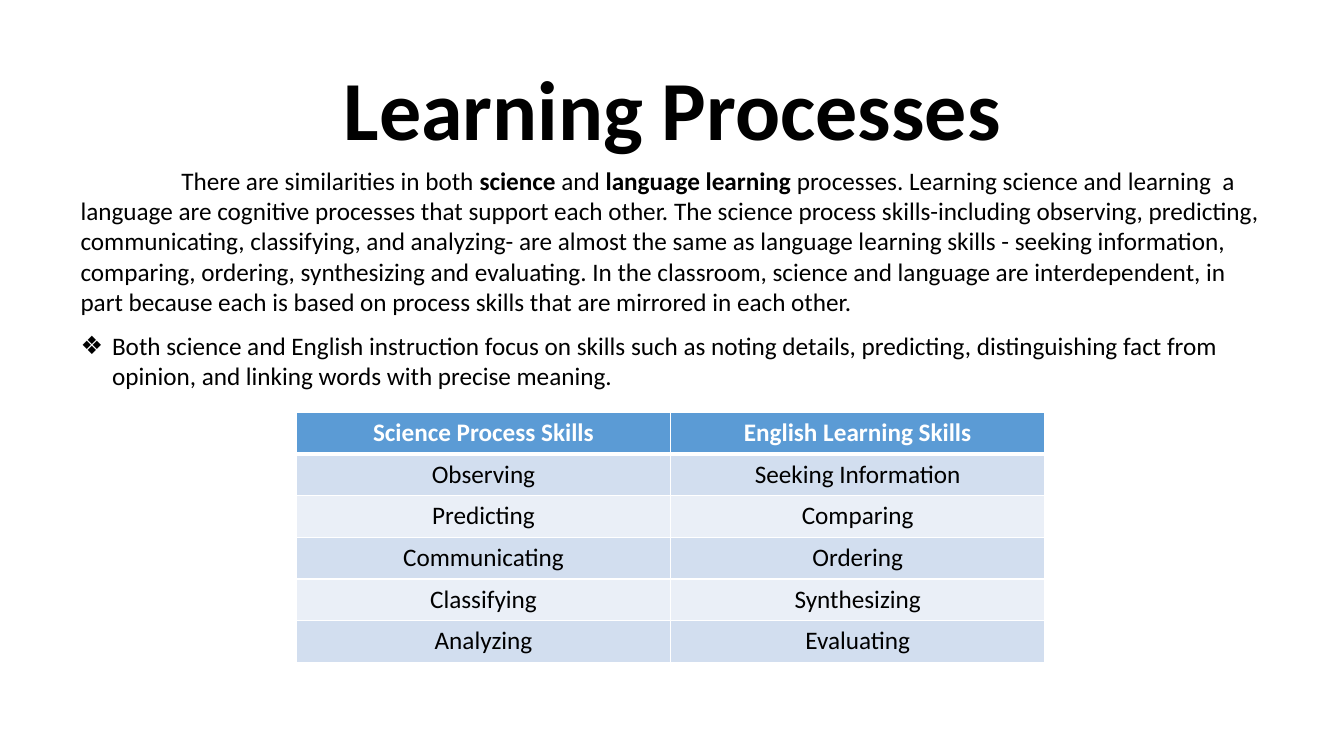
from lxml.etree import SubElement
from pptx import Presentation
from pptx.dml.color import RGBColor
from pptx.enum.text import MSO_ANCHOR as Anchor, MSO_AUTO_SIZE as AutoSize, PP_ALIGN as Align
from pptx.oxml.ns import qn
from pptx.util import Cm, Pt

COLORS = {"text": "000000", "white": "FFFFFF", "header": "5B9BD5",
          "band_dark": "D2DEEF", "band_light": "EAEFF7"}

TITLE = "Learning Processes"
INTRO = [
    ("There are similarities in both ", False),
    ("science ", True),
    ("and ", False),
    ("language learning ", True),
    ("processes. Learning science and learning  a language are cognitive processes that "
     "support each other. The science process skills-including observing, predicting, "
     "communicating, classifying, and analyzing- are almost the same as language learning "
     "skills - seeking information, comparing, ordering, synthesizing and evaluating. In the "
     "classroom, science and language are interdependent, in part because each is based on "
     "process skills that are mirrored in each other.", False),
]
FOCUS = [("Both science and English instruction focus on skills such as noting details, "
          "predicting, distinguishing fact from opinion, and linking words with precise "
          "meaning.", False)]
SKILLS = [
    ("Science Process Skills", "English Learning Skills"),
    ("Observing", "Seeking Information"),
    ("Predicting", "Comparing"),
    ("Communicating", "Ordering"),
    ("Classifying", "Synthesizing"),
    ("Analyzing", "Evaluating"),
]


class SlideBuilder:
    """Holds the style and the current slide."""

    font_name = "Calibri"
    body_size = 18

    def __init__(self, slide):
        self.slide = slide

    def place(self, shape, left, top, width, height):
        box = {"left": left, "top": top, "width": width, "height": height}
        for name, value in box.items():
            setattr(shape, name, Cm(value))

    def add_runs(self, paragraph, runs, size=body_size, color="text", **formats):
        for name, value in formats.items():
            setattr(paragraph, name, value)
        for text, bold in runs:
            run = paragraph.add_run()
            run.text = text
            style = {"name": self.font_name, "size": Pt(size), "bold": bold}
            for name, value in style.items():
                setattr(run.font, name, value)
            run.font.color.rgb = RGBColor.from_string(COLORS[color])

    def indent(self, paragraph, left, first_line, bullet=None):
        properties = paragraph._p.get_or_add_pPr()
        properties.set("marL", str(Cm(left)))
        properties.set("indent", str(Cm(first_line)))
        if bullet:
            SubElement(properties, qn("a:buChar"), char=bullet)

    def title(self, text, *box):
        shape = self.slide.shapes.title
        self.place(shape, *box)
        frame = shape.text_frame
        frame.vertical_anchor = Anchor.MIDDLE
        self.add_runs(frame.paragraphs[0], [(text, True)], size=60,
                      alignment=Align.CENTER, line_spacing=0.9)

    def bullet_list(self, items, *box):
        shape = self.slide.placeholders[1]
        self.place(shape, *box)
        frame = shape.text_frame
        frame.auto_size = AutoSize.NONE
        for index, runs in enumerate(items):
            paragraph = frame.add_paragraph() if index else frame.paragraphs[0]
            self.indent(paragraph, 0.79, -0.79, "❖")
            self.add_runs(paragraph, runs, space_before=Pt(0))

    def text(self, runs, *box):
        shape = self.slide.shapes.add_textbox(*map(Cm, box))
        frame = shape.text_frame
        frame.word_wrap = True
        frame.auto_size = AutoSize.SHAPE_TO_FIT_TEXT
        self.indent(frame.paragraphs[0], 0, 2.54)
        self.add_runs(frame.paragraphs[0], runs)

    def borders(self, cell, top, bottom):
        properties = cell._tc.get_or_add_tcPr()
        for side, points in {"L": 1, "R": 1, "T": top, "B": bottom}.items():
            line = SubElement(properties, qn(f"a:ln{side}"), w=str(Pt(points)))
            fill = SubElement(line, qn("a:solidFill"))
            SubElement(fill, qn("a:srgbClr"), val=COLORS["white"])

    def table(self, rows, left, top, column_width, row_height):
        columns = len(rows[0])
        size = (column_width * columns, row_height * len(rows))
        table = self.slide.shapes.add_table(
            len(rows), columns, *map(Cm, (left, top, *size))).table
        for row_index, row in enumerate(rows):
            is_header = row_index == 0
            band = "band_dark" if row_index % 2 else "band_light"
            for column_index, text in enumerate(row):
                cell = table.cell(row_index, column_index)
                self.borders(cell, 3 if row_index == 1 else 1, 3 if is_header else 1)
                cell.fill.solid()
                cell.fill.fore_color.rgb = RGBColor.from_string(
                    COLORS["header" if is_header else band])
                self.add_runs(cell.text_frame.paragraphs[0], [(text, is_header)],
                              color="white" if is_header else "text", alignment=Align.CENTER)


def main():
    presentation = Presentation()
    presentation.slide_width, presentation.slide_height = Cm(33.87), Cm(19.05)
    slide = presentation.slides.add_slide(presentation.slide_layouts[1])
    builder = SlideBuilder(slide)

    # Heading and introduction
    builder.title(TITLE, 2.34, 1.02, 29.21, 3.68)
    builder.text(INTRO, 1.78, 4.04, 30.23, 4.11)

    # Skills compared
    builder.table(SKILLS, 7.47, 10.39, 9.43, 1.05)

    # Shared focus
    builder.bullet_list([FOCUS], 1.78, 8.2, 30.23, 1.8)

    presentation.save("out.pptx")


if __name__ == "__main__":
    main()
